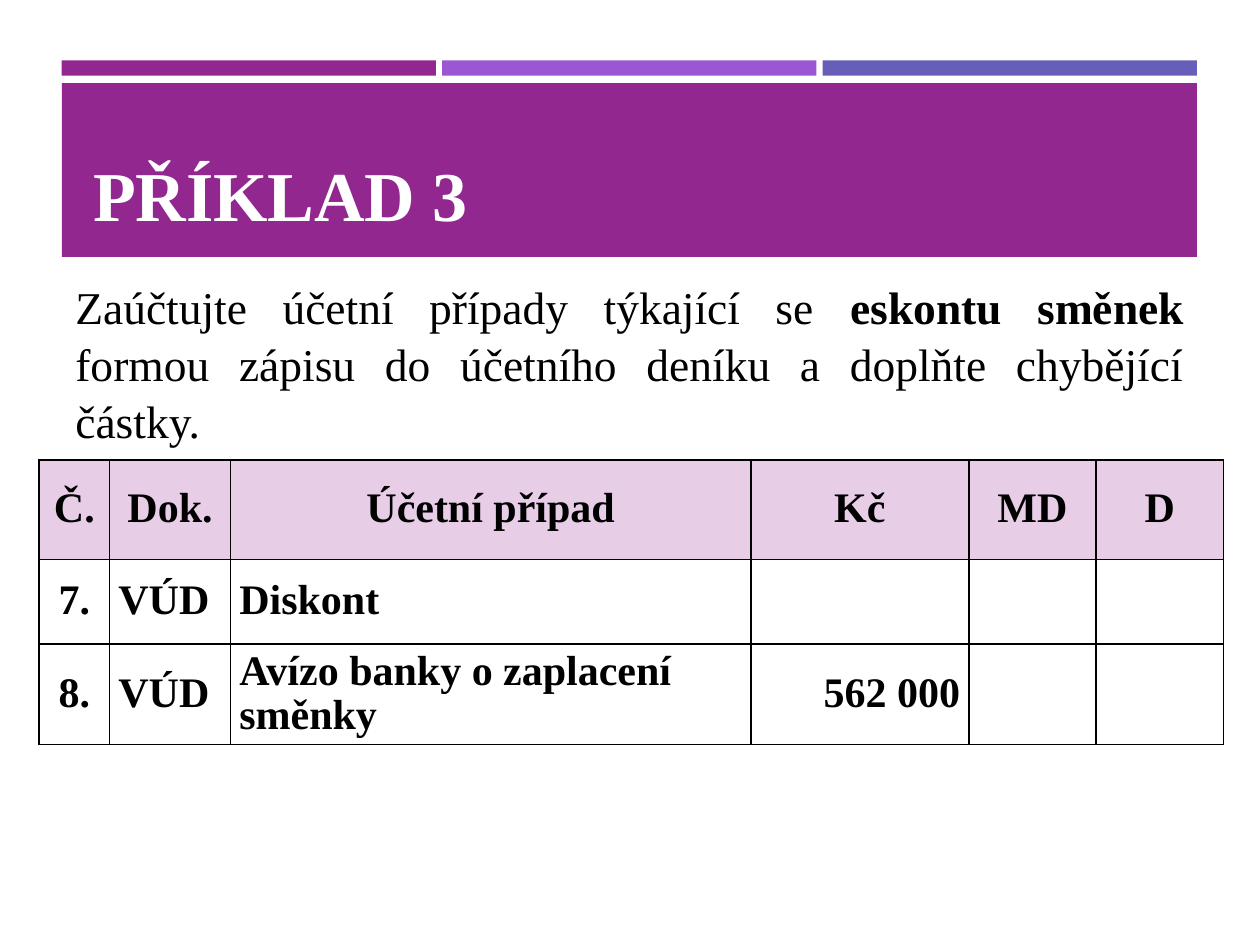
"""Build the accounting exercise slide with its journal table."""
from lxml.etree import SubElement
from pptx import Presentation
from pptx.dml.color import RGBColor
from pptx.enum.shapes import MSO_SHAPE
from pptx.enum.text import MSO_ANCHOR, PP_ALIGN
from pptx.oxml.ns import qn
from pptx.util import Inches, Pt

PURPLE = RGBColor(0x92, 0x27, 0x8F)
VIOLET = RGBColor(0x9B, 0x57, 0xD3)
INDIGO = RGBColor(0x66, 0x5E, 0xB8)
PINK = RGBColor(0xE8, 0xCD, 0xE7)
WHITE = RGBColor(0xFF, 0xFF, 0xFF)
BLACK = RGBColor(0x00, 0x00, 0x00)
FONT = "Times New Roman"

COLS = [0.56, 0.96, 4.13, 1.73, 1.01, 1.01]
ROWS = [0.79, 0.67, 0.8]
ALIGNS = [PP_ALIGN.CENTER, PP_ALIGN.LEFT, PP_ALIGN.LEFT,
          PP_ALIGN.RIGHT, PP_ALIGN.CENTER, PP_ALIGN.CENTER]
CELLS = [
    ["Č.", "Dok.", "Účetní případ", "Kč", "MD", "D"],
    ["7.", "VÚD", "Diskont", "", "", ""],
    ["8.", "VÚD", "Avízo banky o zaplacení směnky", "562 000", "", ""],
]


def style(target, values):
    for name, value in values.items():
        setattr(target, name, value)


def add_bar(slide, box, color):
    bar = slide.shapes.add_shape(MSO_SHAPE.RECTANGLE, *map(Inches, box))
    bar.shadow.inherit = False
    bar.fill.solid()
    bar.fill.fore_color.rgb = color
    bar.line.fill.background()


def add_run(para, text, size, color=BLACK, bold=False):
    run = para.add_run()
    run.text = text
    style(run.font, {"name": FONT, "size": Pt(size), "bold": bold})
    run.font.color.rgb = color


def add_text(slide, box, runs, size, color=BLACK, anchor=MSO_ANCHOR.TOP,
             align=PP_ALIGN.LEFT, spacing=1.0):
    frame = slide.shapes.add_textbox(*map(Inches, box)).text_frame
    style(frame, {"word_wrap": True, "vertical_anchor": anchor})
    para = frame.paragraphs[0]
    style(para, {"alignment": align, "line_spacing": spacing})
    for text, bold in runs:
        add_run(para, text, size, color, bold)


def set_edges(cell):
    props = cell._tc.get_or_add_tcPr()
    for index, side in enumerate(("lnL", "lnR", "lnT", "lnB")):
        edge = props.makeelement(qn(f"a:{side}"), {"w": str(Pt(1))})
        fill = SubElement(edge, qn("a:solidFill"))
        SubElement(fill, qn("a:srgbClr"), val=str(BLACK))
        props.insert(index, edge)


def fill_cell(cell, text, align, head):
    style(cell, {"margin_left": Inches(0.07), "margin_right": Inches(0.07),
                 "margin_top": 0, "margin_bottom": 0,
                 "vertical_anchor": MSO_ANCHOR.MIDDLE})
    if head:
        cell.fill.solid()
        cell.fill.fore_color.rgb = PINK
    else:
        cell.fill.background()
    set_edges(cell)
    if text:
        para = cell.text_frame.paragraphs[0]
        style(para, {"alignment": align, "line_spacing": 0.95})
        add_run(para, text, 24, bold=True)


def add_grid(slide, left, top):
    frame = slide.shapes.add_table(
        len(ROWS), len(COLS), Inches(left), Inches(top),
        Inches(sum(COLS)), Inches(sum(ROWS)))
    table = frame.table
    style(table, {"first_row": False, "horz_banding": False})
    for col, width in zip(table.columns, COLS):
        col.width = Inches(width)
    for r, (row, height) in enumerate(zip(table.rows, ROWS)):
        row.height = Inches(height)
        for cell, text, align in zip(row.cells, CELLS[r], ALIGNS):
            fill_cell(cell, text, PP_ALIGN.CENTER if r == 0 else align, r == 0)


def main():
    deck = Presentation()
    style(deck, {"slide_width": Inches(10), "slide_height": Inches(7.5)})
    slide = deck.slides.add_slide(deck.slide_layouts[6])
    for index, color in enumerate((PURPLE, VIOLET, INDIGO)):
        add_bar(slide, (0.49 + index * 3.02, 0.48, 2.97, 0.12), color)
    add_bar(slide, (0.49, 0.66, 9.01, 1.38), PURPLE)
    add_text(slide, (0.64, 0.75, 8.74, 1.18), [("PŘÍKLAD 3", True)], 40,
             WHITE, MSO_ANCHOR.BOTTOM, spacing=0.9)
    task = [
        ("Zaúčtujte účetní případy týkající se ", False),
        ("eskontu směnek ", True),
        ("formou zápisu do účetního deníku a doplňte chybějící částky.", False),
    ]
    add_text(slide, (0.5, 2.15, 9, 0.98), task, 26,
             align=PP_ALIGN.JUSTIFY, spacing=1.04)
    add_grid(slide, 0.31, 3.65)
    deck.save("out.pptx")


if __name__ == "__main__":
    main()
